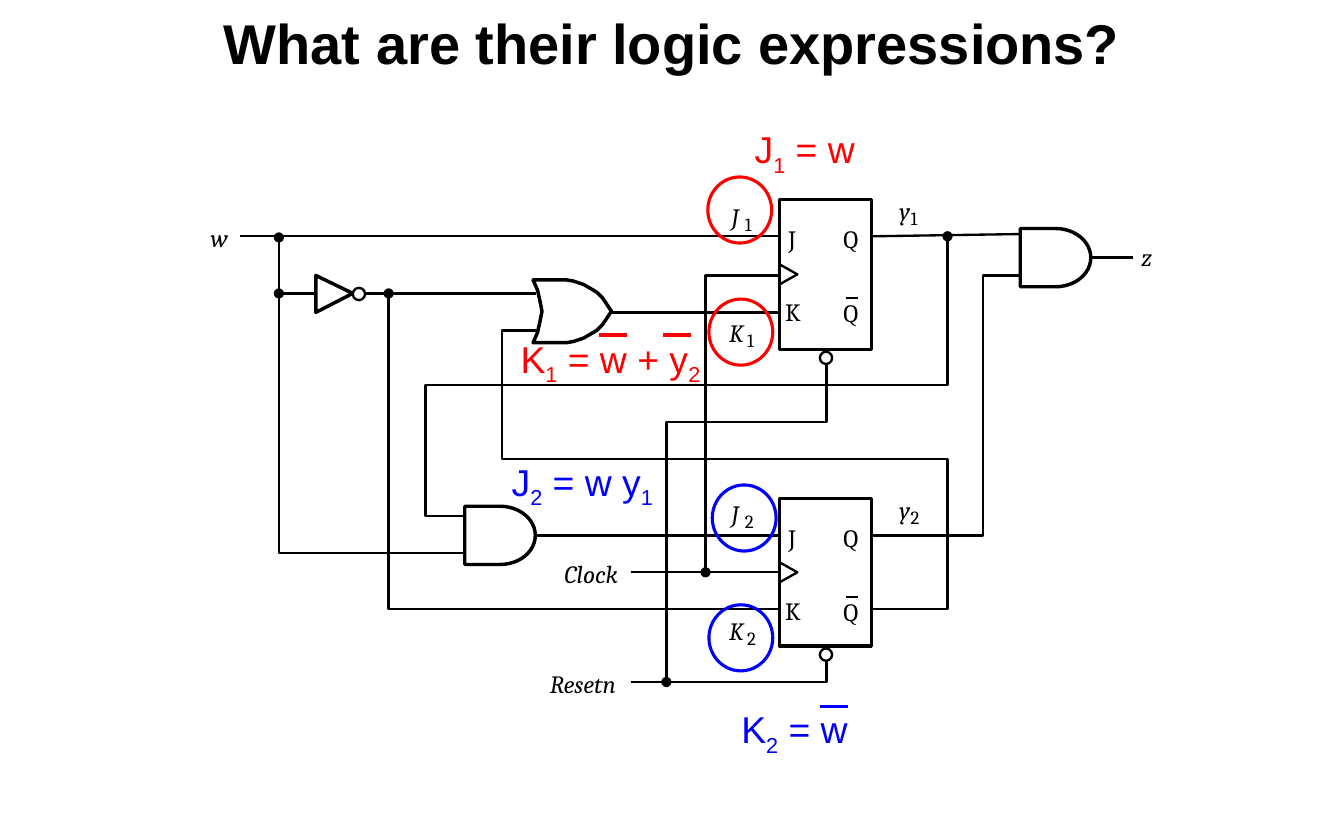
from lxml import etree
from pptx import Presentation
from pptx.dml.color import RGBColor
from pptx.enum.shapes import MSO_CONNECTOR, MSO_SHAPE
from pptx.enum.text import MSO_ANCHOR, PP_ALIGN
from pptx.oxml.ns import qn
from pptx.util import Cm, Pt

STRAIGHT = MSO_CONNECTOR.STRAIGHT
RECTANGLE, OVAL, AND_GATE = MSO_SHAPE.RECTANGLE, MSO_SHAPE.OVAL, MSO_SHAPE.FLOWCHART_DELAY
MIDDLE, TOP = MSO_ANCHOR.MIDDLE, MSO_ANCHOR.TOP
CENTER, LEFT = PP_ALIGN.CENTER, PP_ALIGN.LEFT
LEFT_SIDE, RIGHT_SIDE = 1, 3
BLACK, WHITE, RED, BLUE = "000000", "FFFFFF", "FF0000", "0000FF"
THIN, THICK, RING = 1.5, 2.25, 2

# All positions are in inches on the 12 x 7.5 slide.
TITLE = "What are their logic expressions?"

FLIP_FLOP_LEFT, FLIP_FLOP_WIDTH = 6.96, 0.82
FLIP_FLOPS = [(1.78, 1.34), (4.45, 1.32)]  # top, height
PINS = [("J", 0.08, 0.22, 0.09), ("K", 0.05, 0.87, 0.16),
        ("Q", 0.57, 0.22, 0.16), ("Q", 0.57, 0.88, 0.16)]  # text, dx, dy, width

AND_SIZE = (0.63, 0.52)
AND_STATE, AND_OUTPUT = (4.15, 4.52), (9.11, 2.04)

INVERTER = [(2.82, 2.46), (3.15, 2.62), (2.82, 2.79)]
OR_MIDDLE = 2.78
OR_FRONT = [(4.76, 0.28), (5.06, 0.28), (5.12, 0.27), (5.21, 0.24), (5.28, 0.2),
            (5.33, 0.17), (5.38, 0.12), (5.42, 0.06), (5.46, 0)]  # x, half height
OR_BACK = [(4.84, 0), (4.82, 0.1), (4.8, 0.19)]

WIRES = [
    [(2.14, 2.11), (6.96, 2.11)],
    [(2.49, 2.11), (2.49, 4.94), (4.15, 4.94)],
    [(2.49, 2.62), (2.82, 2.62)],
    [(3.26, 2.62), (4.79, 2.62)],
    [(6.96, 5.44), (3.47, 5.44), (3.47, 2.62)],
    [(5.46, 2.79), (6.96, 2.79)],
    [(4.81, 2.95), (4.48, 2.95), (4.48, 4.1), (8.46, 4.1), (8.46, 5.44), (7.78, 5.44)],
    [(4.15, 4.61), (3.8, 4.61), (3.8, 3.44), (8.46, 3.44), (8.46, 2.11)],
    [(6.3, 5.11), (6.3, 2.46), (6.96, 2.46)],
    [(5.63, 6.09), (7.38, 6.09), (7.38, 5.76)],
    [(5.95, 6.09), (5.95, 3.77), (7.38, 3.77), (7.38, 3.12)],
    [(7.78, 2.11), (9.11, 2.09)],
    [(7.78, 4.78), (8.78, 4.78), (8.78, 2.46), (9.11, 2.46)],
]
JUNCTIONS = [(2.49, 2.12), (2.49, 2.62), (3.47, 2.62), (8.46, 2.11), (6.3, 5.11), (5.95, 6.09)]
JUNCTION_SIZE = 0.07
BUBBLE_SIZE = 0.11

SIGNALS = [("w", 1.88, 1.99, 0.16), ("z", 10.19, 2.16, 0.1),
           ("Clock", 5.04, 4.99, 0.54), ("Resetn", 4.91, 5.97, 0.61)]
INDEXED_SIGNALS = [  # letter, index, left, top, width, index offset
    ("y", "1", 8.03, 1.75, 0.11, 0.1), ("y", "2", 8.03, 4.42, 0.11, 0.1),
    ("J", "1", 6.53, 1.8, 0.09, 0.12), ("J", "2", 6.53, 4.45, 0.09, 0.12),
    ("K", "1", 6.51, 2.84, 0.16, 0.16), ("K", "2", 6.51, 5.5, 0.16, 0.16),
]
RINGS = [(6.32, 1.58, RED), (6.33, 2.67, RED), (6.36, 4.33, BLUE), (6.33, 5.4, BLUE)]
RING_SIZE = (0.57, 0.59)
EQUATIONS = [  # text with _ before each subscript, left, top, width, colour
    ("J_1 = w", 6.64, 1.08, 1.13, RED),
    ("K_1 = w + y_2", 4.55, 2.95, 1.86, RED),
    ("J_2 = w y_1", 4.47, 4.05, 1.51, BLUE),
    ("K_2 = w", 6.52, 6.26, 1.18, BLUE),
]
EQUATION_BARS = [(5.35, 2.99, RED), (5.92, 2.99, RED), (7.32, 6.31, BLUE)]
EQUATION_BAR_WIDTH = 0.25


def inches(value):
    return Cm(value * 2.54)


def color(hex_string):
    return RGBColor.from_string(hex_string)


def set_style(shape, fill, line_color, width):
    shape.shadow.inherit = False
    if fill:
        shape.fill.solid()
        shape.fill.fore_color.rgb = color(fill)
    else:
        shape.fill.background()
    shape.line.color.rgb = color(line_color)
    shape.line.width = Pt(width)


def add_shape(kind, left, top, width, height, fill=WHITE, line_color=BLACK, line_width=THIN):
    shape = slide.shapes.add_shape(kind, *map(inches, (left, top, width, height)))
    set_style(shape, fill, line_color, line_width)
    return shape


def add_line(start, end, line_color=BLACK, line_width=THIN):
    connector = slide.shapes.add_connector(STRAIGHT, *map(inches, (*start, *end)))
    connector.line.color.rgb = color(line_color)
    connector.line.width = Pt(line_width)
    etree.SubElement(connector._element.spPr, qn("a:effectLst"))
    return connector


def add_outline(points, line_width=THIN, close=False):
    corners = [(inches(x), inches(y)) for x, y in points]
    builder = slide.shapes.build_freeform(*corners[0])
    builder.add_line_segments(corners[1:], close=close)
    set_style(builder.convert_to_shape(), None, BLACK, line_width)


def add_text(text, left, top, width, height=0.27, size=16, font="Cambria", text_color=BLACK,
             bold=False, italic=False, align=LEFT, anchor=TOP, wrap=False, inset=(0, 0)):
    """Add a text box; the character after each underscore becomes a subscript."""
    box = slide.shapes.add_textbox(*map(inches, (left, top, width, height)))
    frame = box.text_frame
    frame.word_wrap = wrap
    frame.vertical_anchor = anchor
    frame.margin_left = frame.margin_right = inches(inset[0])
    frame.margin_top = frame.margin_bottom = inches(inset[1])
    paragraph = frame.paragraphs[0]
    paragraph.alignment = align
    first, *others = text.split("_")
    pieces = [(first, False)]
    for other in others:
        pieces += [(other[0], True), (other[1:], False)]
    for piece, subscript in pieces:
        if not piece:
            continue
        run = paragraph.add_run()
        run.text = piece
        run.font.name, run.font.size = font, Pt(size)
        run.font.bold, run.font.italic = bold, italic
        run.font.color.rgb = color(text_color)
        if subscript:
            run._r.get_or_add_rPr().set("baseline", "-25000")


def add_flip_flop(top, height):
    left, middle = FLIP_FLOP_LEFT, top + height / 2
    body = add_shape(RECTANGLE, left, top, FLIP_FLOP_WIDTH, height, line_width=THICK)
    add_outline([(left, middle + 0.09), (left + 0.16, middle), (left, middle - 0.09)])
    for text, dx, dy, width in PINS:
        add_text(text, left + dx, top + dy, width)
    add_line((left + 0.59, top + 0.88), (left + 0.7, top + 0.88))
    return body


presentation = Presentation()
presentation.slide_width, presentation.slide_height = inches(12), inches(7.5)
slide = presentation.slides.add_slide(presentation.slide_layouts[6])

add_text(TITLE, 1, 0, 10, 0.75, size=36, font="Arial", bold=True, align=CENTER,
         anchor=MIDDLE, wrap=True, inset=(0.1, 0.05))

flip_flops = [add_flip_flop(top, height) for top, height in FLIP_FLOPS]
state_gate, output_gate = [add_shape(AND_GATE, *corner, *AND_SIZE, line_width=THICK)
                           for corner in (AND_STATE, AND_OUTPUT)]
add_outline(INVERTER, THICK, close=True)
or_top = OR_BACK + OR_FRONT
or_bottom = OR_FRONT[-2::-1] + OR_BACK[:0:-1]
add_outline([(x, OR_MIDDLE - half) for x, half in or_top]
            + [(x, OR_MIDDLE + half) for x, half in or_bottom], THICK, close=True)

for wire in WIRES:
    if len(wire) == 2:
        add_line(*wire)
    else:
        add_outline(wire)
add_line((5.63, 5.11), (6.96, 5.11)).end_connect(flip_flops[1], LEFT_SIDE)
add_line((4.78, 4.78), (6.96, 4.78)).begin_connect(state_gate, RIGHT_SIDE)
add_line((9.74, 2.3), (10.12, 2.3)).begin_connect(output_gate, RIGHT_SIDE)

bubbles = [(3.15, 2.57)] + [(7.32, top + height + 0.02) for top, height in FLIP_FLOPS]
for left, top in bubbles:
    add_shape(OVAL, left, top, BUBBLE_SIZE, BUBBLE_SIZE)
for x, y in JUNCTIONS:
    add_shape(OVAL, x - JUNCTION_SIZE / 2, y - JUNCTION_SIZE / 2,
              JUNCTION_SIZE, JUNCTION_SIZE, fill=BLACK)

for text, left, top, width in SIGNALS:
    add_text(text, left, top, width, italic=True)
for letter, index, left, top, width, offset in INDEXED_SIGNALS:
    add_text(letter, left, top, width, italic=True)
    add_text(index, left + offset, top + 0.1, 0.08, 0.2, size=12)

for left, top, ring_color in RINGS:
    add_shape(OVAL, left, top, *RING_SIZE, fill=None, line_color=ring_color, line_width=RING)
for text, left, top, width, equation_color in EQUATIONS:
    add_text(text, left, top, width, 0.51, size=24, font="Arial",
             text_color=equation_color, inset=(0.1, 0.05))
for left, y, bar_color in EQUATION_BARS:
    add_line((left, y), (left + EQUATION_BAR_WIDTH, y), bar_color, THICK)

presentation.save("out.pptx")
